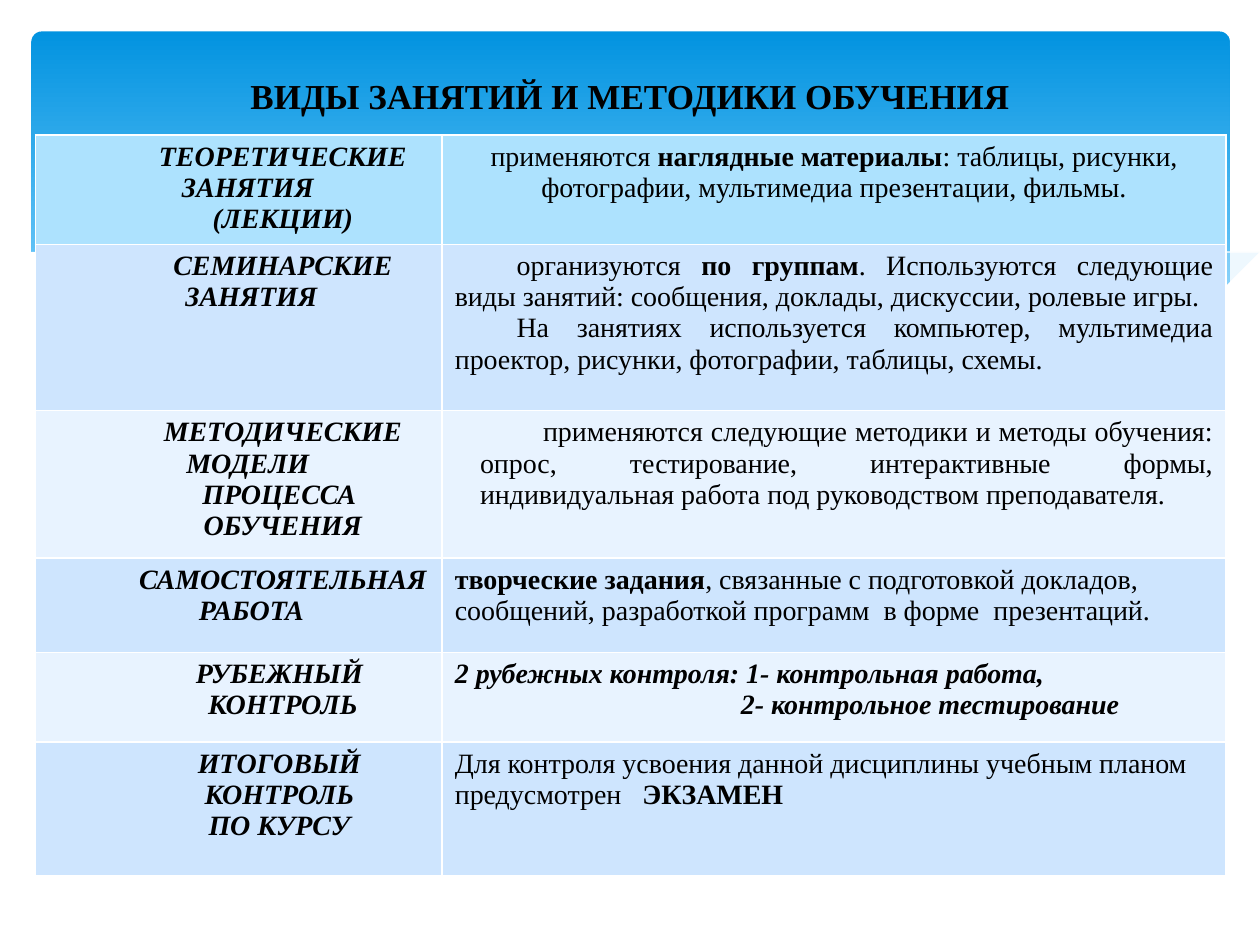
import pptx
import pptx.util
import pptx.dml.color
import pptx.enum.shapes
import pptx.enum.text
import lxml.etree

CELL = pptx.util.Inches(1)  # the slide is a grid of 10 by 7.5 cells
FONT = "Times New Roman"
ALIGN = pptx.enum.text.PP_ALIGN
COLORS = {
    "text": "000000", "white": "FFFFFF", "wave": "C6E7FC",
    "top": "0293E0", "low": "83D3FE",
    "head": "ADE2FE", "dark": "CEE5FE", "light": "E8F3FF",
}

COLS = [3.23, 6.22]
ROWS = [0.87, 1.32, 1.17, 0.75, 0.71, 1.06]

# Paragraph styles: alignment, left margin, first-line indent
NAME = (ALIGN.CENTER, 0.2, 0.5)
MID = (ALIGN.CENTER, 0, 0)
JUST = (ALIGN.JUSTIFY, 0, 0.49)
INSET = (ALIGN.JUSTIFY, 0.2, 0.5)
LEFT = (ALIGN.LEFT, 0, 0)
SHIFT = (ALIGN.LEFT, 2.27, 0)

# Names of the classes, then (style, text); text between asterisks is bold
CLASSES = [
    (["ТЕОРЕТИЧЕСКИЕ ЗАНЯТИЯ ", "(ЛЕКЦИИ)"],
     [(MID, "применяются *наглядные материалы*: таблицы, рисунки, "
            "фотографии, мультимедиа презентации, фильмы.")]),
    (["СЕМИНАРСКИЕ ЗАНЯТИЯ"],
     [(JUST, "организуются *по группам*. Используются следующие виды "
             "занятий: сообщения, доклады, дискуссии, ролевые игры. "),
      (JUST, "На занятиях используется компьютер, мультимедиа проектор, "
             "рисунки, фотографии, таблицы, схемы.")]),
    (["МЕТОДИЧЕСКИЕ МОДЕЛИ ", "ПРОЦЕССА ", "ОБУЧЕНИЯ"],
     [(INSET, "применяются следующие методики и методы обучения: опрос, "
              "тестирование, интерактивные формы, индивидуальная работа "
              "под руководством преподавателя.")]),
    (["САМОСТОЯТЕЛЬНАЯ РАБОТА"],
     [(LEFT, "*творческие задания*, связанные с подготовкой докладов, "
             "сообщений, разработкой программ  в форме  презентаций.")]),
    (["РУБЕЖНЫЙ ", "КОНТРОЛЬ"],
     [(LEFT, "*2 рубежных контроля: 1- контрольная работа,*"),
      (SHIFT, "*2- контрольное тестирование*")]),
    (["ИТОГОВЫЙ ", "КОНТРОЛЬ ", "ПО КУРСУ "],
     [(LEFT, "Для контроля усвоения данной дисциплины учебным планом "
             "предусмотрен   *ЭКЗАМЕН*")]),
]
SLOPED = 4  # the row whose right cell is italic too

# Wave outlines: points, fill, opacity in percent (no fill means a thin line)
WAVES = [
    ([(9.76, 2), (9.35, 2.07), (8.61, 2.23), (7.53, 2.48), (6.61, 2.65),
      (7.19, 2.72), (8.03, 2.78), (8.81, 2.73), (9.35, 2.62), (9.76, 2.47)],
     "wave", 29),
    ([(8.93, 2.73), (8.07, 2.6), (7.06, 2.4), (6.29, 2.22), (5.55, 2.05),
      (4.89, 1.94), (4.2, 1.87), (3.61, 1.85), (2.86, 1.91), (3.62, 2.03),
      (4.49, 2.22), (5.66, 2.48), (6.5, 2.64), (7.22, 2.74), (7.96, 2.78),
      (8.57, 2.77)], "wave", 40),
    ([(3.09, 1.95), (3.53, 1.89), (4.16, 1.87), (4.89, 1.9), (5.56, 1.97),
      (6.36, 2.08), (7.27, 2.26), (8.31, 2.51), (9.07, 2.72)], None, 100),
    ([(6.13, 2.57), (6.72, 2.41), (7.48, 2.23), (8.36, 2.04), (8.95, 1.94),
      (9.38, 1.88), (9.75, 1.85)], None, 100),
    ([(9.77, 2.46), (9.4, 2.59), (8.87, 2.71), (8.09, 2.77), (7.26, 2.72),
      (6.48, 2.62), (5.55, 2.45), (4.47, 2.2), (3.65, 2.02), (2.92, 1.9),
      (2.3, 1.85), (1.77, 1.84), (1.19, 1.87), (0.76, 1.95), (0.4, 2.05),
      (0.23, 2.13), (0.23, 3.29), (9.77, 3.29)], "white", 100),
]


def color(name):
    return pptx.dml.color.RGBColor.from_string(COLORS[name])


def grid(*cells):
    return [round(cell * CELL) for cell in cells]


def paint(run, size, bold, slope=False):
    font = run.font
    font.name, font.size = FONT, pptx.util.Pt(size)
    font.bold, font.italic = bold, slope
    font.color.rgb = color("text")


def add_panel(slide):
    panel = slide.shapes.add_shape(
        pptx.enum.shapes.MSO_SHAPE.ROUNDED_RECTANGLE,
        *grid(0.25, 0.25, 9.51, 2.7))
    panel.adjustments[0] = 0.03
    panel.shadow.inherit = False
    panel.line.fill.background()
    panel.fill.gradient()
    panel.fill.gradient_angle = 270
    for stop, place, name in zip(panel.fill.gradient_stops,
                                 (0, 0.9), ("top", "low")):
        stop.position = place
        stop.color.rgb = color(name)


def add_wave(slide, points, fill, share):
    path = slide.shapes.build_freeform(*points[0], scale=CELL)
    path.add_line_segments(points[1:], close=fill is not None)
    wave = path.convert_to_shape()
    wave.shadow.inherit = False
    if fill is None:
        wave.fill.background()
        wave.line.color.rgb = color("white")
        wave.line.width = 0
        return
    wave.line.fill.background()
    wave.fill.solid()
    wave.fill.fore_color.rgb = color(fill)
    if share < 100:
        tone = wave.element.spPr.find(".//" + pptx.oxml.ns.qn("a:srgbClr"))
        lxml.etree.SubElement(tone, pptx.oxml.ns.qn("a:alpha"),
                              val=str(share * 1000))


def fill_cell(cell, lines, fill, slope):
    """Write (style, text) lines, with text between asterisks in bold."""
    cell.fill.solid()
    cell.fill.fore_color.rgb = color(fill)
    frame = cell.text_frame
    for num, ((align, left, first), text) in enumerate(lines):
        para = frame.add_paragraph() if num else frame.paragraphs[0]
        para.alignment = align
        props = para._p.get_or_add_pPr()
        for key, size in zip(("marL", "indent"), grid(left, first)):
            props.set(key, str(size))
        for part, piece in enumerate(text.split("*")):
            if piece:
                run = para.add_run()
                run.text = piece
                paint(run, 16, part % 2 == 1, slope)


def add_plan(slide):
    table = slide.shapes.add_table(
        len(ROWS), len(COLS), *grid(0.28, 1.07, sum(COLS), sum(ROWS))).table
    for col, width in zip(table.columns, grid(*COLS)):
        col.width = width
    for row, height in zip(table.rows, grid(*ROWS)):
        row.height = height
    for num, (names, lines) in enumerate(CLASSES):
        fill = ("dark" if num % 2 else "light") if num else "head"
        heads = [(NAME, f"*{name}*") for name in names]
        fill_cell(table.cell(num, 0), heads, fill, True)
        fill_cell(table.cell(num, 1), lines, fill, num == SLOPED)


def set_title(slide, text):
    title = slide.shapes.title
    title.left, title.top, title.width, title.height = grid(0.5, 0.37, 9, 0.78)
    frame = title.text_frame
    frame.text = text
    frame.vertical_anchor = pptx.enum.text.MSO_ANCHOR.MIDDLE
    frame.paragraphs[0].alignment = ALIGN.CENTER
    paint(frame.paragraphs[0].runs[0], 20, True)
    title.element.getparent().append(title.element)  # bring to front


def main():
    deck = pptx.Presentation()
    deck.slide_width, deck.slide_height = grid(10, 7.5)
    slide = deck.slides.add_slide(deck.slide_layouts[5])
    add_panel(slide)
    for wave in WAVES:
        add_wave(slide, *wave)
    add_plan(slide)
    set_title(slide, "ВИДЫ ЗАНЯТИЙ И МЕТОДИКИ ОБУЧЕНИЯ")
    deck.save("out.pptx")


if __name__ == "__main__":
    main()
